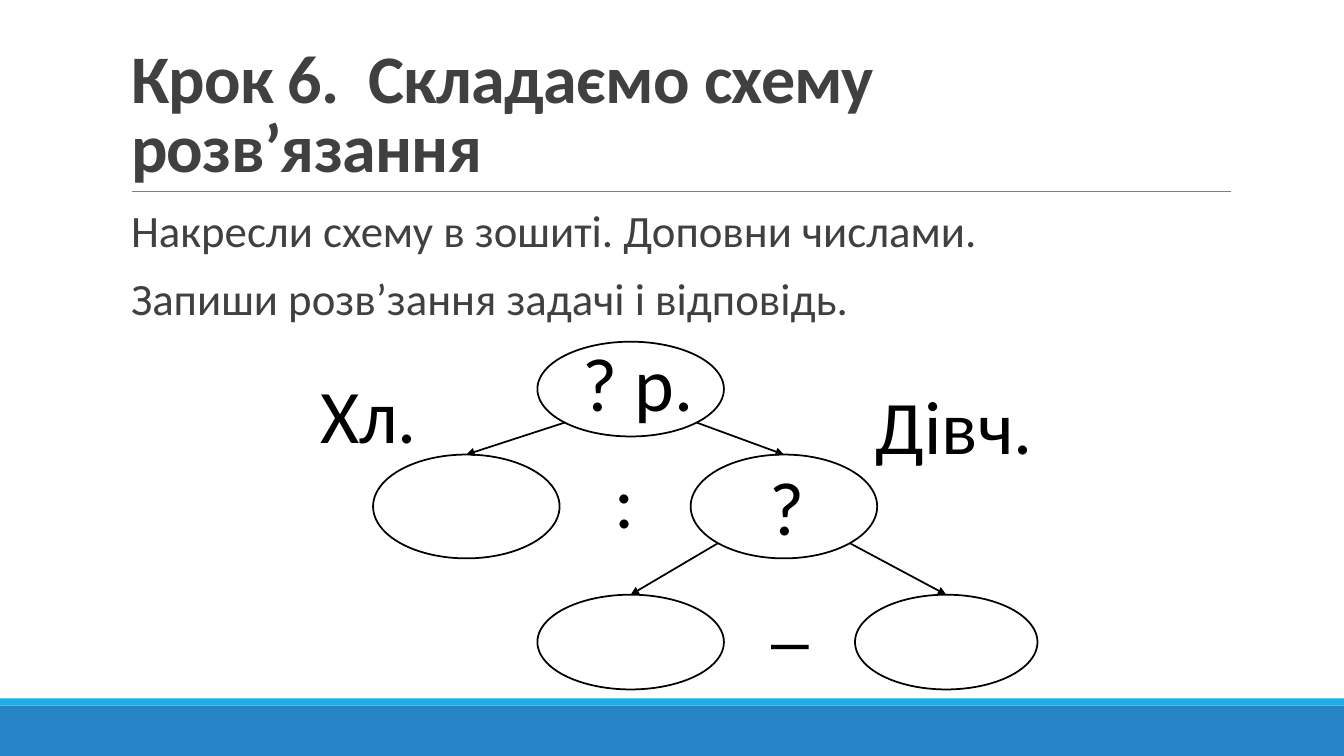
import math
from pptx import Presentation, util as u
from pptx.dml.color import RGBColor
from pptx.enum import shapes, text
from pptx.oxml.ns import qn
from lxml import etree

# Content: lengths in inches
TITLE = "Крок 6.  Складаємо схему розв’язання"
TITLE_BOX = (1.2, 0.31, 11, 1.59)
BODY = ["Накресли схему в зошиті. Доповни числами. ",
        "Запиши розв’зання задачі і відповідь."]
BODY_BOX = (1.2, 2.02, 11, 0.8)
BANDS = [((0, 7, 13.33, 0.5), "band"), ((0, 6.93, 13.33, 0.07), "stripe")]
NODES = {
    "total": (5.33, 3.39, 1.85, 0.94),
    "boys": (3.7, 4.51, 1.85, 1.03),
    "girls": (6.85, 4.51, 1.85, 1.03),
    "minuend": (5.33, 5.9, 1.85, 0.94),
    "subtrahend": (8.48, 5.9, 1.81, 0.94),
}
# Parent, left child, right child
BRANCHES = [("total", "boys", "girls"), ("girls", "minuend", "subtrahend")]
LABELS = [("? р.", 5.67, 3.28, 1.31), ("Хл.", 3.07, 3.6, 1.17),
          ("Дівч.", 8.58, 3.71, 1.77), (":", 5.99, 4.44, 0.41),
          ("_", 7.55, 5.54, 0.58), ("?", 7.53, 4.51, 0.55)]
LABEL_HEIGHT = 1.01

THEME = {
    "font": "Calibri",
    "title": 48.6, "body": 32, "label": 54,
    "ink": "404040", "black": "000000", "white": "FFFFFF", "rule": "808080",
    "band": "2683C6", "stripe": "1CADE4",
    "line": 1.25, "hairline": 0.5,
}


def color(name):
    return RGBColor.from_string(THEME[name])


def box(values):
    return [u.Inches(v) for v in values]


def place(sp, values):
    for name, value in zip(("left", "top", "width", "height"), box(values)):
        setattr(sp, name, value)


def write(p, words, size, ink, bold=False, **paragraph):
    for name, value in paragraph.items():
        setattr(p, name, value)
    r = p.add_run()
    r.text = words
    style = {"name": THEME["font"], "size": u.Pt(THEME[size]), "bold": bold}
    for name, value in style.items():
        setattr(r.font, name, value)
    r.font.color.rgb = color(ink)
    return r


def add_shape(kind, values, fill, line=None):
    sp = s.shapes.add_shape(kind, *box(values))
    sp.shadow.inherit = False
    sp.fill.solid()
    sp.fill.fore_color.rgb = color(fill)
    if line:
        sp.line.color.rgb = color(line)
        sp.line.width = u.Pt(THEME["line"])
    else:
        sp.line.fill.background()
    return sp


def add_line(start, end, ink, width, arrow=False):
    c = s.shapes.add_connector(shapes.MSO_CONNECTOR.STRAIGHT, *box(start + end))
    c.line.color.rgb = color(ink)
    c.line.width = u.Pt(THEME[width])
    if arrow:
        etree.SubElement(c.line._get_or_add_ln(), qn("a:tailEnd"), type="triangle")
    etree.SubElement(c._element.spPr, qn("a:effectLst"))
    return c


prs = Presentation()
prs.slide_width, prs.slide_height = u.Inches(13.33), u.Inches(7.5)
s = prs.slides.add_slide(prs.slide_layouts[1])
title, body = s.placeholders

# Footer bands and title rule
for values, fill in BANDS:
    add_shape(shapes.MSO_SHAPE.RECTANGLE, values, fill)
add_line((1.31, 1.9), (12.21, 1.9), "rule", "hairline")

# Title
place(title, TITLE_BOX)
tf = title.text_frame
tf.word_wrap, tf.auto_size = True, text.MSO_AUTO_SIZE.NONE
tf.vertical_anchor = text.MSO_ANCHOR.BOTTOM
r = write(tf.paragraphs[0], TITLE, "title", "ink", True,
          alignment=text.PP_ALIGN.LEFT, line_spacing=0.85)
r.font._element.set("spc", "-50")

# Instructions
place(body, BODY_BOX)
tf = body.text_frame
tf.word_wrap, tf.auto_size = True, text.MSO_AUTO_SIZE.NONE
tf.margin_left = tf.margin_right = 0
for i, words in enumerate(BODY):
    p = tf.add_paragraph() if i else tf.paragraphs[0]
    write(p, words, "body", "ink", alignment=text.PP_ALIGN.JUSTIFY,
          line_spacing=0.9, space_before=u.Pt(12), space_after=u.Pt(2))
    pPr = p._p.get_or_add_pPr()
    pPr.set("marL", str(u.Inches(0.1)))
    pPr.set("indent", "0")
    etree.SubElement(pPr, qn("a:buNone"))

# Scheme ovals
ovals = {name: add_shape(shapes.MSO_SHAPE.OVAL, values, "white", "black")
         for name, values in NODES.items()}

# Arrows leave each parent at 45 degrees and reach the top of the child
for parent, *children in BRANCHES:
    x, y, w, h = NODES[parent]
    for child, side in zip(children, (-1, 1)):
        reach = math.sqrt(0.5)
        start = (x + w / 2 * (1 + side * reach), y + h / 2 * (1 + reach))
        cx, cy, cw, _ = NODES[child]
        c = add_line(start, (cx + cw / 2, cy), "black", "line", arrow=True)
        c.end_connect(ovals[child], 0)

# Labels and operation signs
for words, x, y, w in LABELS:
    tf = s.shapes.add_textbox(*box((x, y, w, LABEL_HEIGHT))).text_frame
    tf.word_wrap, tf.auto_size = False, text.MSO_AUTO_SIZE.SHAPE_TO_FIT_TEXT
    write(tf.paragraphs[0], words, "label", "black",
          alignment=text.PP_ALIGN.CENTER)

prs.save("out.pptx")
